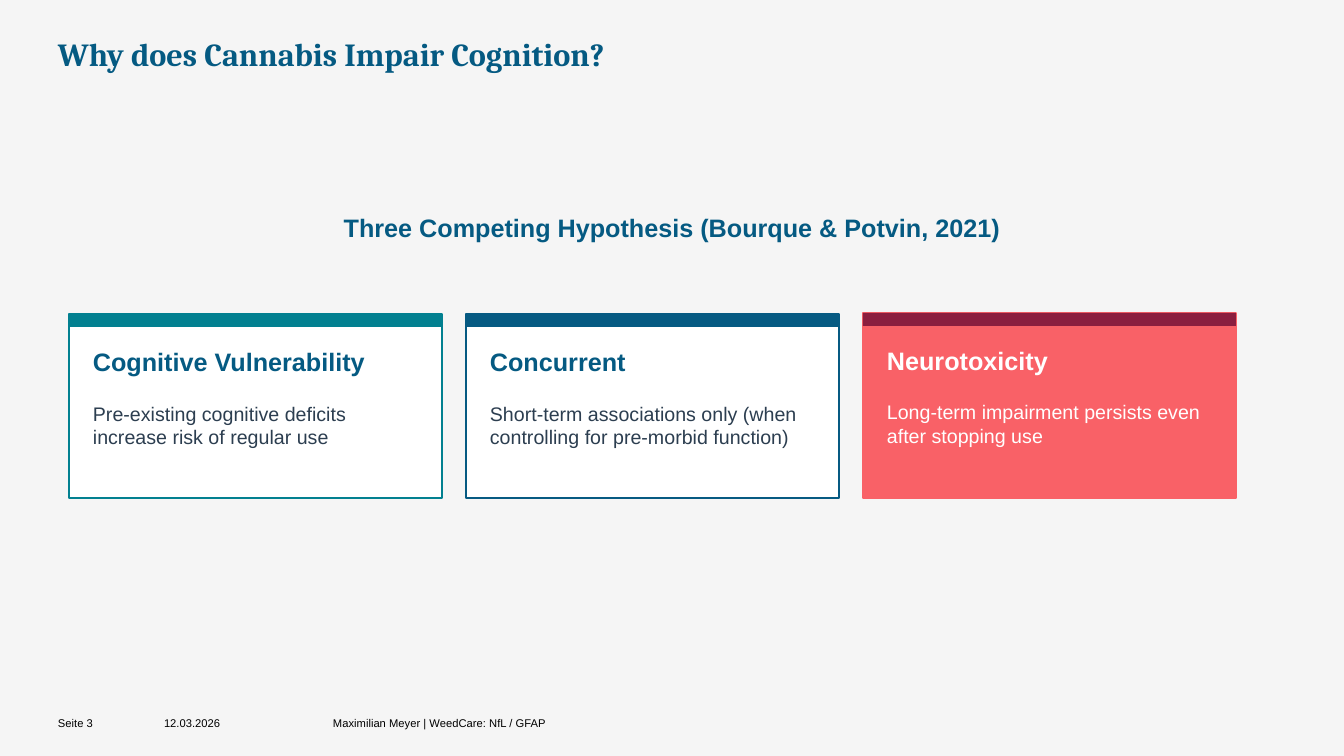
from pptx import Presentation
from pptx.dml.color import RGBColor
from pptx.enum.shapes import MSO_SHAPE
from pptx.enum.text import MSO_ANCHOR, PP_ALIGN
from pptx.util import Pt

BACKGROUND = RGBColor(0xF5, 0xF5, 0xF5)
BLACK = RGBColor(0, 0, 0)
WHITE = RGBColor(0xFF, 0xFF, 0xFF)
HEADING = RGBColor(0x05, 0x5A, 0x82)
BODY = RGBColor(0x2C, 0x3E, 0x50)
TEAL = RGBColor(0x02, 0x80, 0x90)
BLUE = RGBColor(0x06, 0x5A, 0x82)
CORAL = RGBColor(0xF9, 0x61, 0x67)
WINE = RGBColor(0x8B, 0x1E, 0x3F)

TITLE = "Why does Cannabis Impair Cognition?"
SUBTITLE = "Three Competing Hypothesis (Bourque & Potvin, 2021)"
FOOTER = [  # text, left, width
    ("Seite 3", 58, 85),
    ("12.03.2026", 164, 158),
    ("Maximilian Meyer | WeedCare: NfL / GFAP", 333, 415),
]
HYPOTHESES = [  # name, claim, fill, outline, bar, name colour, claim colour, top
    ("Cognitive Vulnerability",
     "Pre-existing cognitive deficits increase risk of regular use",
     WHITE, TEAL, TEAL, HEADING, BODY, 314),
    ("Concurrent",
     "Short-term associations only (when controlling for pre-morbid function)",
     WHITE, BLUE, BLUE, HEADING, BODY, 314),
    ("Neurotoxicity",
     "Long-term impairment persists even after stopping use",
     CORAL, CORAL, WINE, WHITE, WHITE, 313),
]

SLIDE_W, SLIDE_H = 1344, 756
CARD_LEFT, CARD_W, CARD_STEP, CARD_BOTTOM = 69, 373, 397, 498
BAR_H, TEXT_INSET, TEXT_DROP, TEXT_H = 13, 14, 27, 143


def emu(*px):
    """Turn px into EMU at 100.8 px to the inch."""
    return [round(v * 914400 / 100.8) for v in px]


def add_text(s, box, lines, anchor=MSO_ANCHOR.TOP, align=PP_ALIGN.LEFT,
             font="Arial", margin=0, gap=0):
    """Add a text box; each line is (text, size, colour, bold)."""
    tf = s.shapes.add_textbox(*emu(*box)).text_frame
    tf.word_wrap = True
    tf.vertical_anchor = anchor
    tf.margin_left = tf.margin_right = Pt(2 * margin)
    tf.margin_top = tf.margin_bottom = Pt(margin)
    for i, (text, size, colour, bold) in enumerate(lines):
        p = tf.add_paragraph() if i else tf.paragraphs[0]
        p.text = text
        p.alignment = align
        if i:
            p.space_before = Pt(gap)
        p.font.name, p.font.size, p.font.bold = font, Pt(size), bold
        p.font.color.rgb = colour


def add_rect(s, box, fill, outline=None):
    sp = s.shapes.add_shape(MSO_SHAPE.RECTANGLE, *emu(*box))
    sp.shadow.inherit = False
    sp.fill.solid()
    sp.fill.fore_color.rgb = fill
    if outline is None:
        sp.line.fill.background()
    else:
        sp.line.color.rgb = outline
        sp.line.width = Pt(2)


def main():
    prs = Presentation()
    prs.slide_width, prs.slide_height = emu(SLIDE_W, SLIDE_H)
    s = prs.slides.add_slide(prs.slide_layouts[6])
    s.background.fill.solid()
    s.background.fill.fore_color.rgb = BACKGROUND

    add_text(s, (58, 34, 1228, 99), [(TITLE, 23, HEADING, True)], font="Cambria")
    add_text(s, (0, 212, SLIDE_W, 55), [(SUBTITLE, 18, HEADING, True)],
             align=PP_ALIGN.CENTER)
    for text, left, width in FOOTER:
        add_text(s, (left, 708, width, 31), [(text, 8, BLACK, False)],
                 anchor=MSO_ANCHOR.MIDDLE)

    for i, (name, claim, fill, outline, bar, name_colour, claim_colour,
            top) in enumerate(HYPOTHESES):
        left = CARD_LEFT + i * CARD_STEP
        add_rect(s, (left, top, CARD_W, CARD_BOTTOM - top), fill, outline)
        add_rect(s, (left, top, CARD_W, BAR_H), bar)
        add_text(s, (left + TEXT_INSET, top + TEXT_DROP,
                     CARD_W - 2 * TEXT_INSET, TEXT_H),
                 [(name, 18, name_colour, True), (claim, 14, claim_colour, False)],
                 margin=3.6, gap=18)

    prs.save("out.pptx")


if __name__ == "__main__":
    main()
